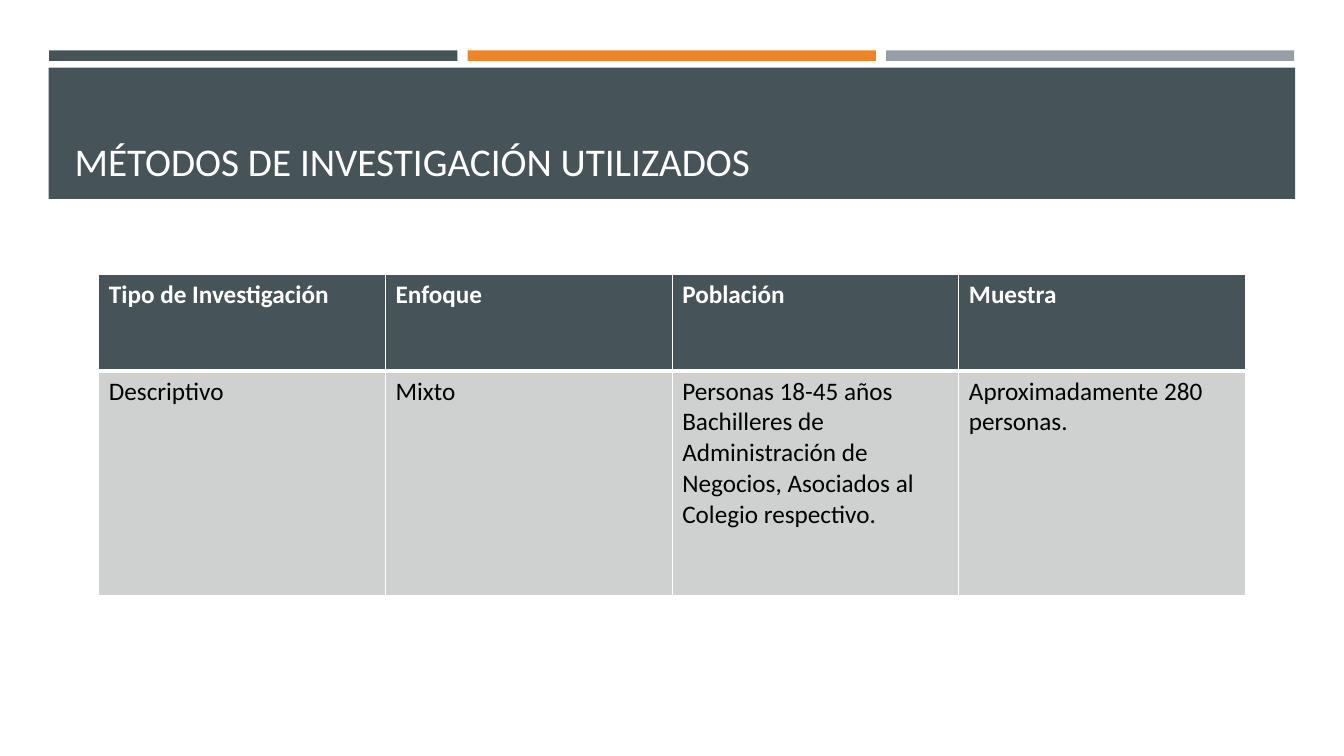
from lxml.etree import SubElement
from pptx import Presentation
from pptx.dml.color import RGBColor
from pptx.enum.shapes import MSO_SHAPE as Shape
from pptx.enum.text import MSO_ANCHOR as Anchor
from pptx.oxml.ns import qn
from pptx.util import Pt

SLATE, ORANGE, GRAY = "465359", "ED8428", "969FA7"
WHITE, BLACK, LIGHT = "FFFFFF", "000000", "CFD1D1"
HEADINGS = ["Tipo de Investigación", "Enfoque", "Población", "Muestra"]
DETAILS = [
    "Descriptivo",
    "Mixto",
    "Personas 18-45 años\n"
    "Bachilleres de Administración de Negocios, Asociados al Colegio respectivo.",
    "Aproximadamente 280 personas.",
]


def paint(target, color):
    target.solid()
    target.fore_color.rgb = RGBColor.from_string(color)


def add_bar(page, left, top, width, height, color):
    bar = page.shapes.add_shape(
        Shape.RECTANGLE, Pt(left), Pt(top), Pt(width), Pt(height))
    bar.shadow.inherit = False
    bar.line.fill.background()
    paint(bar.fill, color)


def write_text(frame, text, size, color, bold=False):
    frame.text = text
    frame.word_wrap = True
    for para in frame.paragraphs:
        para.font.name = "Calibri"
        para.font.size = Pt(size)
        para.font.bold = bold
        para.font.color.rgb = RGBColor.from_string(color)


def add_title(page, text):
    box = page.shapes.add_textbox(Pt(46.2), Pt(55.4), Pt(868), Pt(80))
    write_text(box.text_frame, text, 28, WHITE)
    box.text_frame.vertical_anchor = Anchor.BOTTOM


def set_border(cell, side, width):
    properties = cell._tc.get_or_add_tcPr()
    line = SubElement(properties, qn(f"a:{side}"), w=str(Pt(width)))
    fill = SubElement(line, qn("a:solidFill"))
    SubElement(fill, qn("a:srgbClr"), val=WHITE)


def style_row(table, index, texts, height, fill, color, bold, edges):
    table.rows[index].height = Pt(height)
    for cell, text in zip(table.rows[index].cells, texts):
        write_text(cell.text_frame, text, 18, color, bold)
        for side, width in edges.items():
            set_border(cell, side, width)
        paint(cell.fill, fill)


def add_methods_table(page):
    frame = page.shapes.add_table(
        2, len(HEADINGS), Pt(70.6), Pt(196), Pt(819.2), Pt(229.8))
    table = frame.table
    style_row(table, 0, HEADINGS, 69.1, SLATE, WHITE, True,
              {"lnL": 1, "lnR": 1, "lnT": 1, "lnB": 3})
    style_row(table, 1, DETAILS, 160.7, LIGHT, BLACK, False,
              {"lnL": 1, "lnR": 1, "lnT": 3, "lnB": 1})


def main():
    deck = Presentation()
    deck.slide_width, deck.slide_height = Pt(960), Pt(540)
    page = deck.slides.add_slide(deck.slide_layouts[6])
    for index, color in enumerate([SLATE, ORANGE, GRAY]):
        add_bar(page, 35.1 + index * 298.9, 36, 291.6, 7.5, color)
    add_bar(page, 34.8, 48.4, 890.4, 93.7, SLATE)
    add_title(page, "MÉTODOS DE INVESTIGACIÓN UTILIZADOS")
    add_methods_table(page)
    deck.save("out.pptx")


if __name__ == "__main__":
    main()
